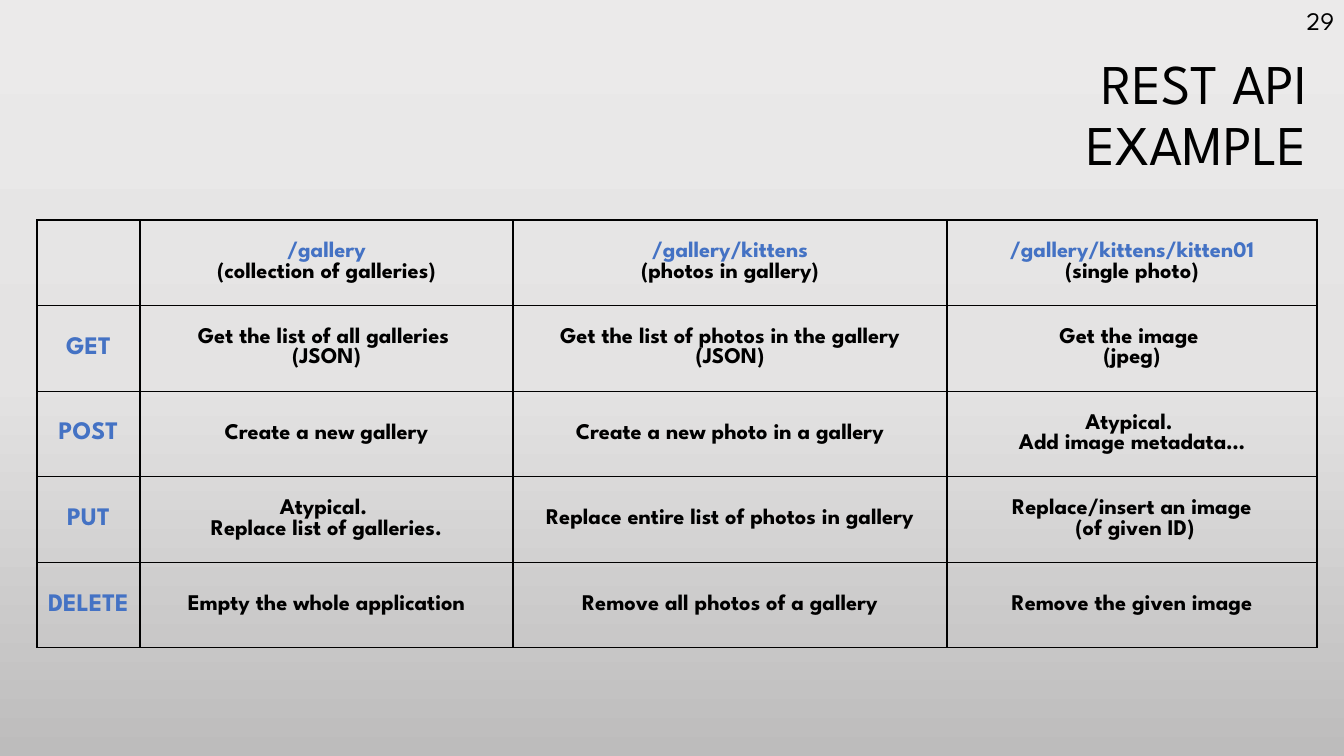
from copy import deepcopy
from dataclasses import dataclass

from lxml.etree import SubElement
from pptx import Presentation
from pptx.dml.color import RGBColor
from pptx.enum.text import MSO_ANCHOR as Anchor, PP_ALIGN as Align
from pptx.oxml.ns import qn
from pptx.util import Emu, Pt

PX_PER_INCH = 100.8
FONT = "League Spartan"
BLACK, BLUE = "000000", "4472C4"
BACKGROUND = [(0, "EBEAEA"), (0.5, "E4E3E3"), (1, "BDBCBC")]

COLUMN_WIDTHS = [103, 373, 434, 370]
# A vertical tab is a line break, a newline starts a paragraph
REST_ROWS = [
    ["", "/gallery\n(collection of galleries)", "/gallery/kittens\n(photos in gallery)",
     "/gallery/kittens/kitten01\n(single photo)"],
    ["GET", "Get the list of all galleries \v(JSON)",
     "Get the list of photos in the gallery (JSON)", "Get the image \v(jpeg)"],
    ["POST", "Create a new gallery", "Create a new photo in a gallery",
     "Atypical. \vAdd image metadata…"],
    ["PUT", "Atypical. \vReplace list of galleries.",
     "Replace entire list of photos in gallery", "Replace/insert an image\v (of given ID)"],
    ["DELETE", "Empty the whole application", "Remove all photos of a gallery",
     "Remove the given image"],
]


@dataclass
class Label:
    text: str
    left: int
    top: int
    width: int
    height: int
    size: int
    anchor: Anchor
    spacing: float = 1.0


LABELS = [
    Label("REST API\vEXAMPLE", 26, 46, 1291, 142, 40, Anchor.MIDDLE, 0.9),
    Label("29", 1053, 0, 291, 40, 18, Anchor.TOP),
]


def px(length: int) -> Emu:
    return Emu(round(length * 914400 / PX_PER_INCH))


def rgb(colour: str) -> RGBColor:
    return RGBColor.from_string(colour)


def style(paragraph, size: int, colour: str, align: Align, bold: bool = False) -> None:
    paragraph.alignment = align
    font = paragraph.font
    font.name, font.size, font.bold = FONT, Pt(size), bold
    font.color.rgb = rgb(colour)


def paint_background(slide) -> None:
    fill = slide.background.fill
    fill.gradient()
    fill.gradient_angle = 270
    stop_list = slide.element.find(".//" + qn("a:gsLst"))
    stop_list.insert(1, deepcopy(stop_list[0]))
    for stop, (position, colour) in zip(fill.gradient_stops, BACKGROUND):
        stop.position = position
        stop.color.rgb = rgb(colour)


def add_label(slide, label: Label) -> None:
    box = slide.shapes.add_textbox(px(label.left), px(label.top),
                                   px(label.width), px(label.height))
    frame = box.text_frame
    frame.word_wrap = True
    frame.vertical_anchor = label.anchor
    frame.text = label.text
    paragraph = frame.paragraphs[0]
    style(paragraph, label.size, BLACK, Align.RIGHT)
    paragraph.line_spacing = label.spacing


def add_borders(cell) -> None:
    properties = cell._tc.get_or_add_tcPr()
    for index, side in enumerate(("a:lnL", "a:lnR", "a:lnT", "a:lnB")):
        line = SubElement(properties, qn(side), w=str(Pt(1)))
        SubElement(SubElement(line, qn("a:solidFill")), qn("a:srgbClr"), val=BLACK)
        properties.insert(index, line)


def add_rest_table(slide) -> None:
    table = slide.shapes.add_table(len(REST_ROWS), len(COLUMN_WIDTHS), px(37), px(220),
                                   px(sum(COLUMN_WIDTHS)), px(428)).table
    table.first_row = table.horz_banding = False
    for column, width in zip(table.columns, COLUMN_WIDTHS):
        column.width = px(width)
    for row, texts in enumerate(REST_ROWS):
        for col, text in enumerate(texts):
            cell = table.cell(row, col)
            cell.text = text
            cell.vertical_anchor = Anchor.MIDDLE
            cell.fill.background()
            add_borders(cell)
            for line, paragraph in enumerate(cell.text_frame.paragraphs):
                # Methods and resource addresses are blue
                is_key = col == 0 or (row == 0 and line == 0)
                style(paragraph, 18 if col == 0 else 16, BLUE if is_key else BLACK,
                      Align.CENTER, bold=True)


def main() -> None:
    deck = Presentation()
    deck.slide_width, deck.slide_height = px(1344), px(756)
    slide = deck.slides.add_slide(deck.slide_layouts[6])
    paint_background(slide)
    # Title and page number
    for label in LABELS:
        add_label(slide, label)
    # Methods against resources
    add_rest_table(slide)
    deck.save("out.pptx")


if __name__ == "__main__":
    main()
